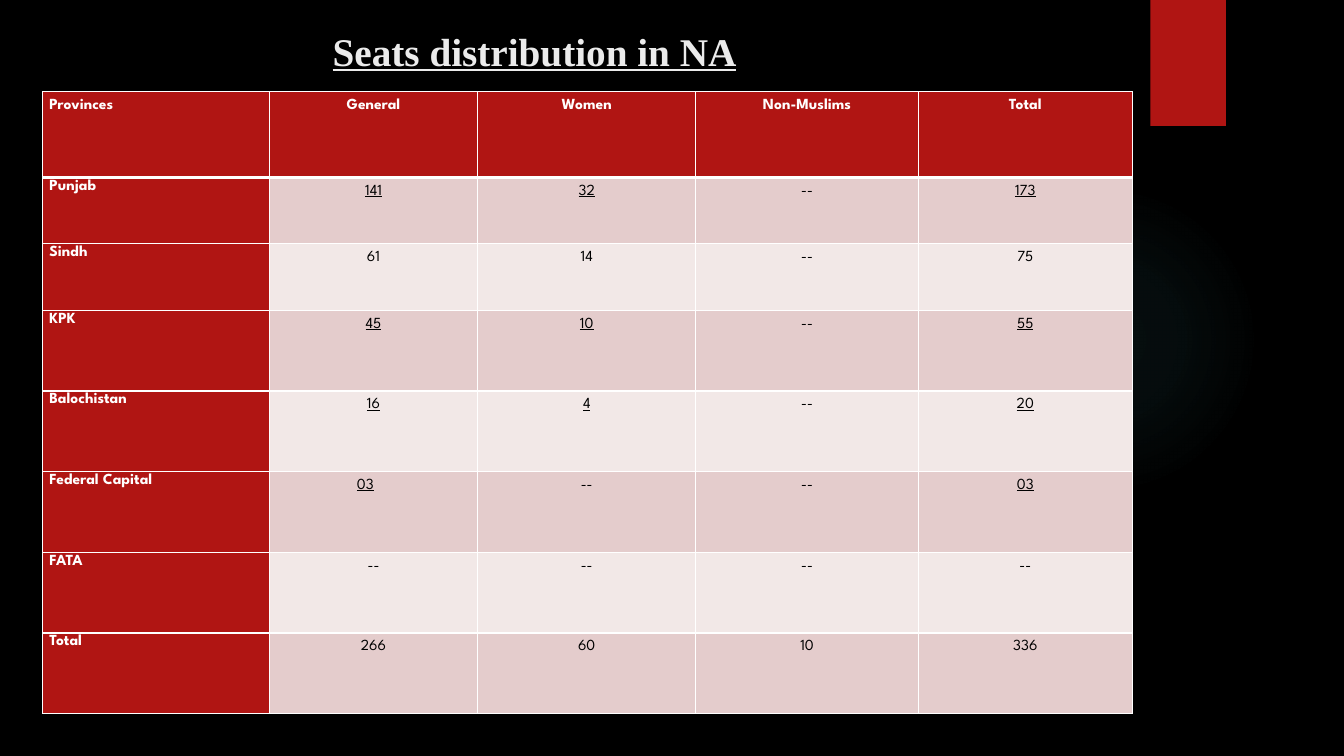
import pptx
import pptx.util
import pptx.oxml
import pptx.dml.color
import pptx.enum.shapes
import pptx.enum.text

Inches = pptx.util.Inches
Shape = pptx.enum.shapes.MSO_SHAPE
Align = pptx.enum.text.PP_ALIGN
Anchor = pptx.enum.text.MSO_ANCHOR
NS = 'xmlns:a="http://schemas.openxmlformats.org/drawingml/2006/main"'

theme = {
    "back": "000000", "red": "B01513", "title": "EBEBEB", "white": "FFFFFF",
    "ink": "000000", "dark": "E4CCCC", "light": "F2E8E7", "glow": "50B9C1",
    "head": "Times New Roman", "body": "League Spartan",
    "big": 28, "small": 11, "thin": 1, "thick": 3,
}


def paint(fill, name):
    fill.solid()
    fill.fore_color.rgb = pptx.dml.color.RGBColor.from_string(theme[name])


def write(frame, text, face="body", size="small", color="ink", bold=False,
          under=False, align=Align.LEFT, space=1.0):
    para = frame.paragraphs[0]
    para.alignment = align
    para.line_spacing = space
    run = para.add_run()
    run.text = text
    font = run.font
    font.name = theme[face]
    font.size = pptx.util.Pt(theme[size])
    font.bold = bold
    font.underline = under
    font.color.rgb = pptx.dml.color.RGBColor.from_string(theme[color])


deck = pptx.Presentation()
deck.slide_width = Inches(13.33)
deck.slide_height = Inches(7.5)
slide = deck.slides.add_slide(deck.slide_layouts[6])
paint(slide.background.fill, "back")

glow = slide.shapes.add_shape(Shape.OVAL, Inches(9.41), Inches(1.83), Inches(3.08), Inches(3.08))
glow.shadow.inherit = False
glow.line.fill.background()
stops = "".join(
    f'<a:gs pos="{pos}000"><a:srgbClr val="{theme["glow"]}"><a:alpha val="{alpha}000"/></a:srgbClr></a:gs>'
    for pos, alpha in [(0, 7), (36, 6), (69, 0)]
)
shade = pptx.oxml.parse_xml(
    f'<a:gradFill {NS} rotWithShape="1"><a:gsLst>{stops}</a:gsLst><a:path path="circle">'
    '<a:fillToRect l="50000" t="50000" r="50000" b="50000"/></a:path></a:gradFill>'
)
glow.element.spPr.insert(2, shade)

flag = slide.shapes.add_shape(Shape.RECTANGLE, Inches(11.41), 0, Inches(0.75), Inches(1.25))
flag.shadow.inherit = False
flag.line.fill.background()
paint(flag.fill, "red")

title = slide.shapes.add_textbox(Inches(0.71), Inches(0.19), Inches(10.29), Inches(0.62)).text_frame
title.word_wrap = True
title.vertical_anchor = Anchor.MIDDLE
title.margin_left = Inches(2.59)
write(title, "Seats distribution in NA", face="head", size="big", color="title", bold=True, under=True)

seats = [
    ["Provinces", "General", "Women", "Non-Muslims", "Total"],
    ["Punjab", "141", "32", "--", "173"],
    ["Sindh", "61", "14", "--", "75"],
    ["KPK", "45", "10", "--", "55"],
    ["Balochistan", "16", "4", "--", "20"],
    ["Federal Capital", "03", "--", "--", "03"],
    ["FATA", "--", "--", "--", "--"],
    ["Total", "266", "60", "10", "336"],
]
lined = {"Punjab", "KPK", "Balochistan", "Federal Capital"}
widths = [2.25, 2.07, 2.16, 2.21, 2.12]
heights = [0.85, 0.66, 0.66] + [0.8] * 5

table = slide.shapes.add_table(
    len(seats), len(widths), Inches(0.42), Inches(0.91), Inches(sum(widths)), Inches(sum(heights))
).table
for col, width in zip(table.columns, widths):
    col.width = Inches(width)
for row, height in zip(table.rows, heights):
    row.height = Inches(height)

for r, row in enumerate(seats):
    for c, text in enumerate(row):
        cell = table.cell(r, c)
        cell.margin_left = cell.margin_right = Inches(0.07)
        cell.margin_top = cell.margin_bottom = 0
        props = cell._tc.get_or_add_tcPr()
        for side in "LRTB":
            wide = (r, side) in [(0, "B"), (1, "T")]
            line = pptx.util.Pt(theme["thick" if wide else "thin"])
            props.append(pptx.oxml.parse_xml(
                f'<a:ln{side} {NS} w="{line}"><a:solidFill><a:srgbClr val="{theme["white"]}"/>'
                f'</a:solidFill></a:ln{side}>'
            ))
        label = r == 0 or c == 0
        paint(cell.fill, "red" if label else "dark" if r % 2 else "light")
        align = Align.CENTER if c else Align.LEFT
        if (row[0], c) == ("Federal Capital", 1):
            align = Align.LEFT
            cell.margin_left = Inches(0.87)
        write(
            cell.text_frame, text, color="white" if label else "ink", bold=label,
            under=c > 0 and row[0] in lined and text != "--",
            align=align, space=1.15 if r and c == 0 else 1.5,
        )

deck.save("out.pptx")
